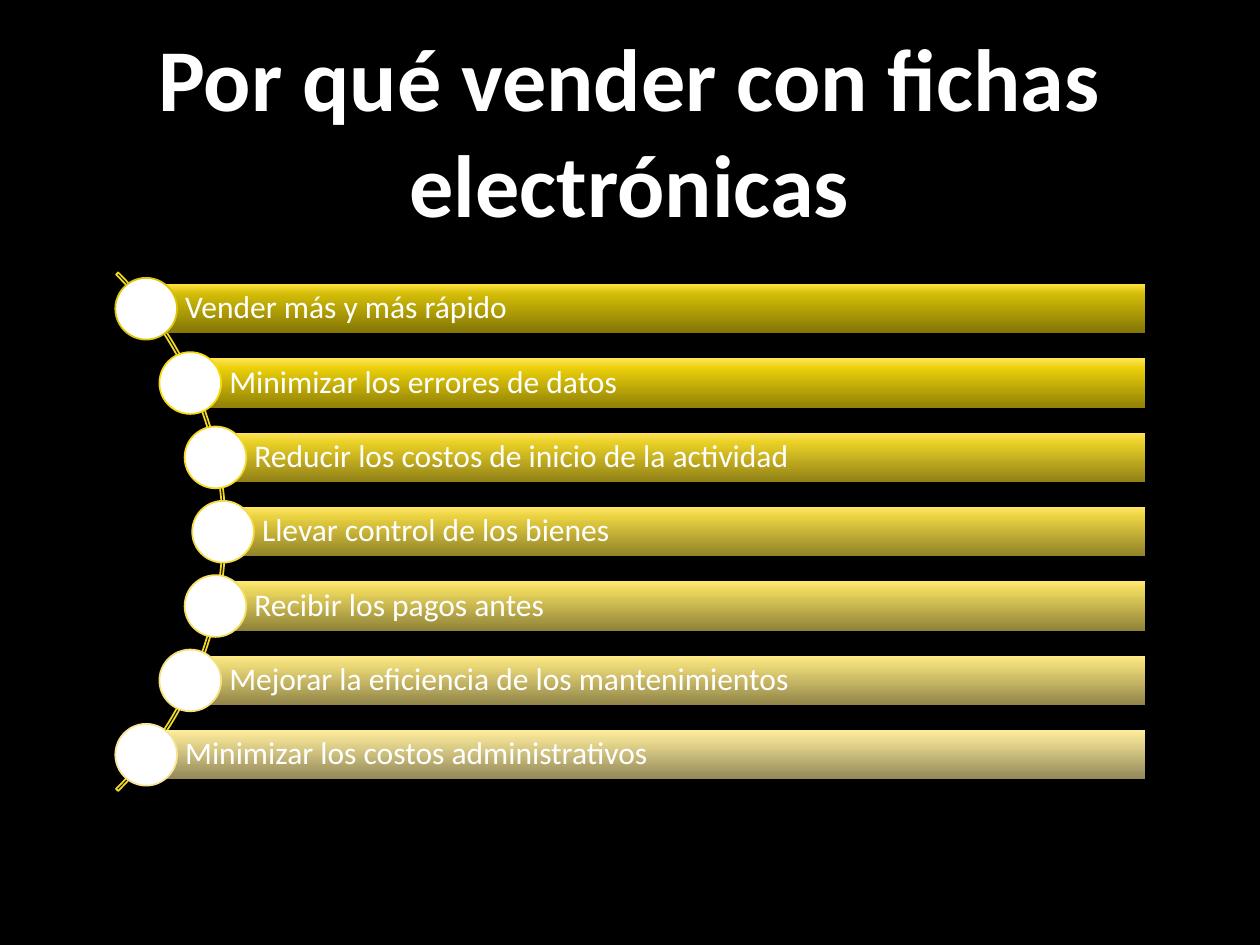
from dataclasses import dataclass

from lxml import etree
from pptx import Presentation
from pptx.dml.color import RGBColor
from pptx.enum import shapes, text
from pptx.oxml import ns
from pptx.util import Inches, Pt


@dataclass(frozen=True)
class Theme:
    font: str = "Calibri"
    background: str = "000000"
    ink: str = "FFFFFF"
    arc: str = "F2D923"
    title_size: float = 50.4
    reason_size: float = 18
    line_width: float = 1


@dataclass(frozen=True)
class Reason:
    wording: str
    left: float
    shades: tuple[str, str, str]  # bar gradient, bottom to top
    ring: str


THEME = Theme()
REASONS = [
    Reason("Vender más y más rápido", 1.16, ("827504", "D2BC07", "FFE23E"), "DCC507"),
    Reason("Minimizar los errores de datos", 1.51, ("918106", "EACF0A", "FFE455"), "F5D90A"),
    Reason("Reducir los costos de inicio de la actividad", 1.71, ("918117", "E9D026", "FFE459"), "F4DA27"),
    Reason("Llevar control de los bienes", 1.77, ("908228", "E9D141", "FFE663"), "F4DB44"),
    Reason("Recibir los pagos antes", 1.71, ("908339", "E9D45C", "FFE873"), "F4DE60"),
    Reason("Mejorar la eficiencia de los mantenimientos", 1.51, ("918549", "EAD776", "FFEA87"), "F5E17C"),
    Reason("Minimizar los costos administrativos", 1.16, ("928859", "EBDB90", "FFED9D"), "F6E597"),
]
SHADE_STOPS = (0, 80, 100)
FIRST_CENTER, PITCH = 2.45, 0.59
BAR_RIGHT, BAR_HEIGHT, DOT_SIZE = 9.09, 0.39, 0.49


def color(code: str) -> RGBColor:
    return RGBColor.from_string(code)


def add_run(paragraph, wording: str, size: float, bold: bool = False) -> None:
    run = paragraph.add_run()
    run.text = wording
    run.font.name, run.font.size, run.font.bold = THEME.font, Pt(size), bold
    run.font.color.rgb = color(THEME.ink)


def add_plain_shape(slide, kind, left: float, top: float, width: float, height: float):
    shape = slide.shapes.add_shape(kind, Inches(left), Inches(top), Inches(width), Inches(height))
    shape.shadow.inherit = False
    return shape


def outline(shape, code: str) -> None:
    shape.line.color.rgb = color(code)
    shape.line.width = Pt(THEME.line_width)


def shade(shape, codes: tuple[str, str, str]) -> None:
    """Fill with a three-stop gradient running upwards."""
    shape.fill.gradient()
    shape.fill.gradient_angle = 90
    stops = shape._element.spPr.find(".//" + ns.qn("a:gsLst"))
    for stop in list(stops):
        stops.remove(stop)
    for position, code in zip(SHADE_STOPS, codes):
        stop = etree.SubElement(stops, ns.qn("a:gs"), pos=str(position * 1000))
        etree.SubElement(stop, ns.qn("a:srgbClr"), val=code)


def add_title(slide, wording: str) -> None:
    title = slide.shapes.title
    title.left, title.top = Inches(0.85), Inches(0.12)
    title.width, title.height = Inches(8.29), Inches(1.81)
    frame = title.text_frame
    frame.word_wrap = True
    frame.auto_size = text.MSO_AUTO_SIZE.NONE
    frame.vertical_anchor = text.MSO_ANCHOR.MIDDLE
    frame.paragraphs[0].alignment = text.PP_ALIGN.CENTER
    add_run(frame.paragraphs[0], wording, THEME.title_size, bold=True)


def add_arc(slide) -> None:
    arc = add_plain_shape(slide, shapes.MSO_SHAPE.BLOCK_ARC, -4.03, 1.31, 5.82, 5.82)
    for index, value in enumerate((189, 27, 0.004)):
        arc.adjustments[index] = value
    arc.fill.background()
    outline(arc, THEME.arc)


def add_reason(slide, reason: Reason, center: float) -> None:
    # Bar with its wording
    bar = add_plain_shape(slide, shapes.MSO_SHAPE.RECTANGLE, reason.left, center - BAR_HEIGHT / 2,
                          BAR_RIGHT - reason.left, BAR_HEIGHT)
    shade(bar, reason.shades)
    bar.line.fill.background()
    frame = bar.text_frame
    frame.word_wrap = True
    frame.vertical_anchor = text.MSO_ANCHOR.MIDDLE
    frame.margin_left = Inches(0.31)
    frame.margin_right = frame.margin_top = frame.margin_bottom = Inches(0.05)
    paragraph = frame.paragraphs[0]
    paragraph.alignment = text.PP_ALIGN.LEFT
    paragraph.line_spacing = 0.9
    add_run(paragraph, reason.wording, THEME.reason_size)

    # Dot centred on the bar's left end
    dot = add_plain_shape(slide, shapes.MSO_SHAPE.OVAL, reason.left - DOT_SIZE / 2,
                          center - DOT_SIZE / 2, DOT_SIZE, DOT_SIZE)
    dot.fill.solid()
    dot.fill.fore_color.rgb = color(THEME.ink)
    outline(dot, reason.ring)


def main() -> None:
    deck = Presentation()
    deck.slide_width, deck.slide_height = Inches(10), Inches(7.5)
    slide = deck.slides.add_slide(deck.slide_layouts[5])
    slide.background.fill.solid()
    slide.background.fill.fore_color.rgb = color(THEME.background)

    add_title(slide, "Por qué vender con fichas electrónicas")
    add_arc(slide)
    for row, reason in enumerate(REASONS):
        add_reason(slide, reason, FIRST_CENTER + row * PITCH)
    deck.save("out.pptx")


if __name__ == "__main__":
    main()
